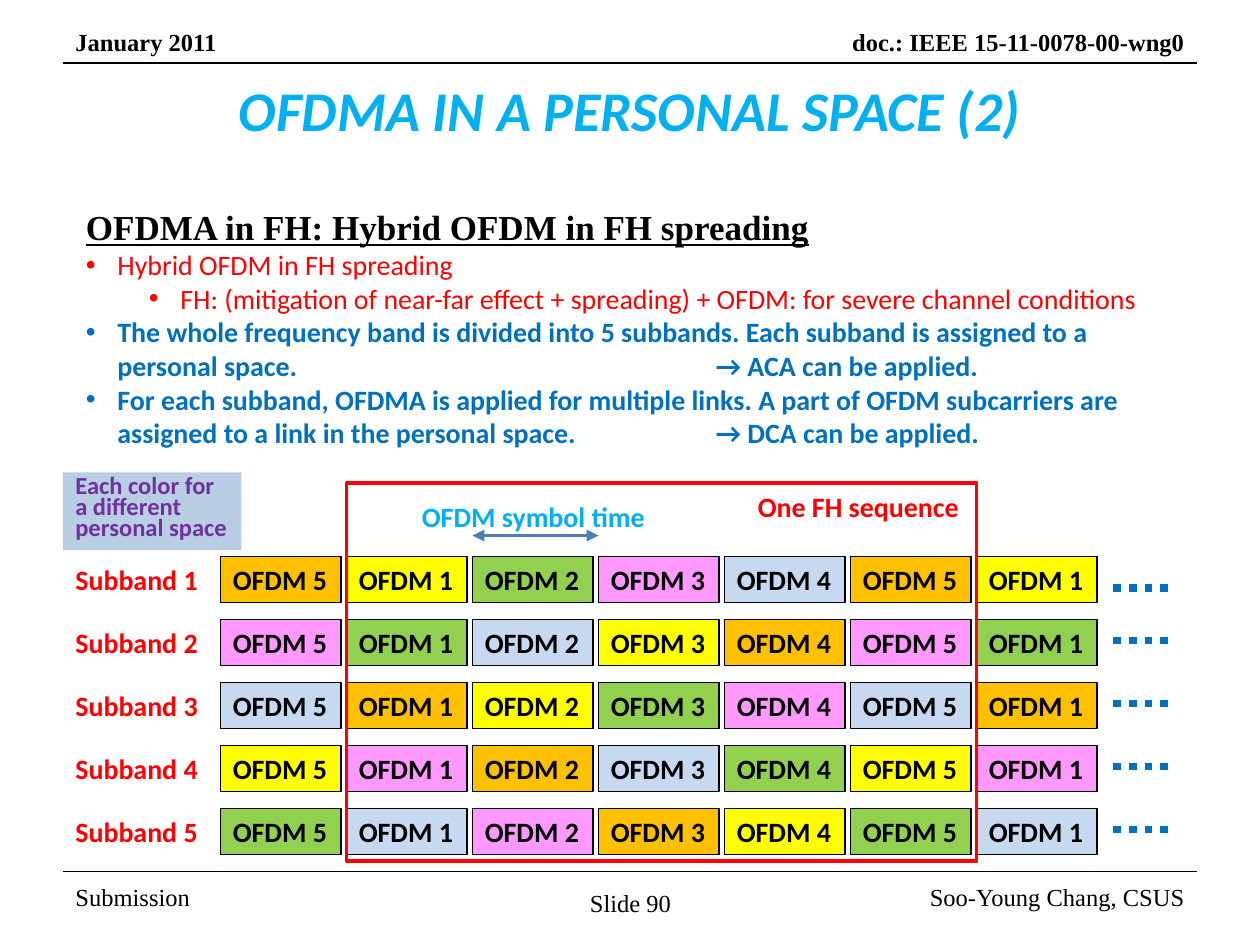
import lxml.etree
import pptx
import pptx.dml.color
import pptx.enum.dml
import pptx.enum.shapes
import pptx.enum.text
import pptx.oxml.ns
import pptx.util

COLORS = {
    "black": "000000", "white": "FFFFFF", "red": "FF0000", "blue": "0070C0",
    "sky": "00B0F0", "steel": "4B7EBC", "purple": "7030A0", "legend": "B9CDE5",
    "Y": "FFFF00", "G": "92D050", "P": "FF99FF", "B": "C6D9F1", "O": "FFC000",
}
SERIF, SANS = "Times New Roman", "Calibri"
ALIGN = pptx.enum.text.PP_ALIGN
ANCHOR = pptx.enum.text.MSO_ANCHOR

# Fill of OFDM symbols 1 to 5 in each subband
SUBBANDS = ["YGPBO", "GBYOP", "OYGPB", "POBGY", "BPOYG"]
DOT_ROWS = [56, 61, 67, 73, 79]


def rgb(name):
    return pptx.dml.color.RGBColor.from_string(COLORS[name])


def sub(parent, tag, **attrs):
    return lxml.etree.SubElement(parent, pptx.oxml.ns.qn(tag), **attrs)


def write(p, text, font=SANS, size=16, color="black", bold=True, italic=False,
          underline=False, align=ALIGN.LEFT, spacing=None):
    p.alignment = align
    if spacing:
        p.line_spacing = pptx.util.Pt(spacing)
    r = p.add_run()
    r.text = text
    r.font.name = font
    r.font.size = pptx.util.Pt(size)
    r.font.bold = bold
    r.font.italic = italic
    r.font.underline = underline
    r.font.color.rgb = rgb(color)


class Deck:
    """Slide on a grid of 120 columns by 90 rows."""

    def __init__(self):
        self.prs = pptx.Presentation()
        self.prs.slide_width = pptx.util.Inches(10)
        self.prs.slide_height = pptx.util.Inches(7.5)
        self.col = self.prs.slide_width / 120
        self.row = self.prs.slide_height / 90
        self.slide = self.prs.slides.add_slide(self.prs.slide_layouts[6])

    def grid(self, x, y, w, h):
        return (round(x * self.col), round(y * self.row),
                round(w * self.col), round(h * self.row))

    def text(self, x, y, w, h, text=None, wrap=True, anchor=ANCHOR.TOP, **style):
        sp = self.slide.shapes.add_textbox(*self.grid(x, y, w, h))
        tf = sp.text_frame
        tf.word_wrap = wrap
        tf.vertical_anchor = anchor
        if text:
            write(tf.paragraphs[0], text, **style)
        return tf

    def box(self, x, y, w, h, text=None, fill=None, line=None, weight=0.75, **style):
        sp = self.slide.shapes.add_shape(
            pptx.enum.shapes.MSO_SHAPE.RECTANGLE, *self.grid(x, y, w, h))
        sp.shadow.inherit = False
        if fill:
            sp.fill.solid()
            sp.fill.fore_color.rgb = rgb(fill)
        else:
            sp.fill.background()
        if line:
            sp.line.color.rgb = rgb(line)
            sp.line.width = pptx.util.Pt(weight)
        else:
            sp.line.fill.background()
        if text:
            tf = sp.text_frame
            tf.word_wrap = True
            tf.vertical_anchor = ANCHOR.TOP
            write(tf.paragraphs[0], text, **style)

    def rule(self, x1, x2, y, color="black", weight=0.75, dotted=False, arrows=False):
        left, top, right, _ = self.grid(x1, y, x2, 0)
        cn = self.slide.shapes.add_connector(
            pptx.enum.shapes.MSO_CONNECTOR.STRAIGHT, left, top, right, top)
        cn.line.color.rgb = rgb(color)
        cn.line.width = pptx.util.Pt(weight)
        if dotted:
            cn.line.dash_style = pptx.enum.dml.MSO_LINE.ROUND_DOT
            dash = cn.line._get_or_add_ln().find(pptx.oxml.ns.qn("a:prstDash"))
            dash.set("val", "sysDot")
        if arrows:
            for end in ("a:headEnd", "a:tailEnd"):
                sub(cn.line._get_or_add_ln(), end, type="triangle")
        sub(cn._element.spPr, "a:effectLst")

    def paragraph(self, tf, text, indent=0.25, bullet=True, tab=None, **style):
        p = tf.paragraphs[0]
        if p.runs:
            p = tf.add_paragraph()
        write(p, text, **style)
        pPr = p._p.get_or_add_pPr()
        pPr.set("marL", str(pptx.util.Inches(indent)))
        pPr.set("indent", str(-pptx.util.Inches(0.25)))
        if bullet:
            sub(pPr, "a:buFont", typeface="Arial")
            sub(pPr, "a:buChar", char="•")
        else:
            sub(pPr, "a:buNone")
        if tab:
            sub(sub(pPr, "a:tabLst"), "a:tab", pos=str(pptx.util.Inches(tab)), algn="l")


def main():
    deck = Deck()

    # Header and footer
    head = dict(font=SERIF, size=14)
    foot = dict(head, bold=False)
    deck.rule(6, 114, 83)
    deck.text(6, 83, 28, 4.8, "Submission", anchor=ANCHOR.MIDDLE, **foot)
    deck.text(86, 83, 28, 4.8, "Soo-Young Chang, CSUS", anchor=ANCHOR.MIDDLE,
              align=ALIGN.RIGHT, **foot)
    deck.text(55, 84, 10.2, 4, "Slide 90", wrap=False, **foot)
    deck.rule(6, 114, 6)
    deck.text(6, 2, 17, 4, "January 2011", **head)
    deck.text(71, 2, 43, 4, "doc.: IEEE 15-11-0078-00-wng0", align=ALIGN.RIGHT, **head)

    # Title
    deck.text(6, 3.6, 108, 15, "OFDMA IN A PERSONAL SPACE (2)", anchor=ANCHOR.MIDDLE,
              size=32, color="sky", italic=True, align=ALIGN.CENTER, spacing=30)

    # Explanation
    tf = deck.text(7, 19, 106, 24.6)
    deck.paragraph(tf, "OFDMA in FH: Hybrid OFDM in FH spreading", bullet=False,
                   font=SERIF, size=20, underline=True)
    deck.paragraph(tf, "Hybrid OFDM in FH spreading", color="red", bold=False)
    deck.paragraph(tf, "FH: (mitigation of near-far effect + spreading) + OFDM: "
                   "for severe channel conditions", indent=0.75, color="red", bold=False)
    deck.paragraph(tf, "The whole frequency band is divided into 5 subbands. Each subband "
                   "is assigned to a personal space.\t→ ACA can be applied.",
                   tab=5, color="blue")
    deck.paragraph(tf, "For each subband, OFDMA is applied for multiple links. A part of "
                   "OFDM subcarriers are assigned to a link in the personal space."
                   "\t→ DCA can be applied.", tab=5, color="blue")

    # Subbands: label, seven symbols, continuation dots
    for i, (fills, dot_row) in enumerate(zip(SUBBANDS, DOT_ROWS)):
        y = 53 + 6 * i
        deck.box(6, y, 16, 4.4, f"Subband {i + 1}", fill="white", color="red")
        for j in range(7):
            k = (j - 1) % 5
            deck.box(21 + 12 * j, y, 11.5, 4.4, f"OFDM {k + 1}", fill=fills[k], line="black")
        deck.rule(106, 112, dot_row, color="blue", weight=4.5, dotted=True)

    # Sequence frame, symbol time and legend
    deck.text(39, 47, 24.6, 4.4, "OFDM symbol time", wrap=False, color="sky")
    deck.box(33, 46, 60, 36, line="red", weight=2)
    deck.text(71, 46, 21.8, 4.4, "One FH sequence", wrap=False, color="red")
    deck.rule(45, 57, 51, color="steel", weight=2.25, arrows=True)
    deck.box(6, 45, 17, 7.4, "Each color for a different personal space", fill="legend",
             size=14, color="purple", spacing=12)

    deck.prs.save("out.pptx")


if __name__ == "__main__":
    main()
